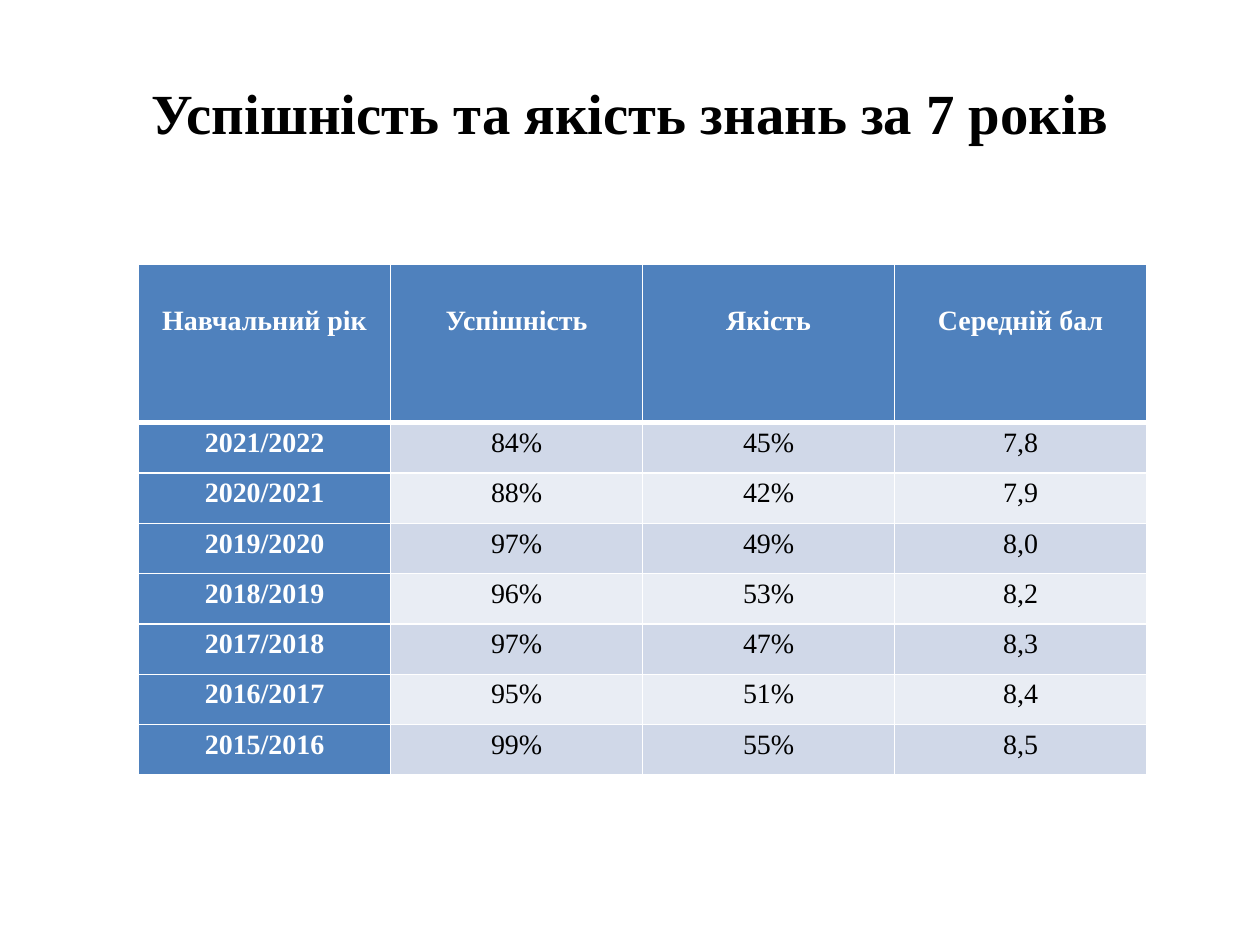
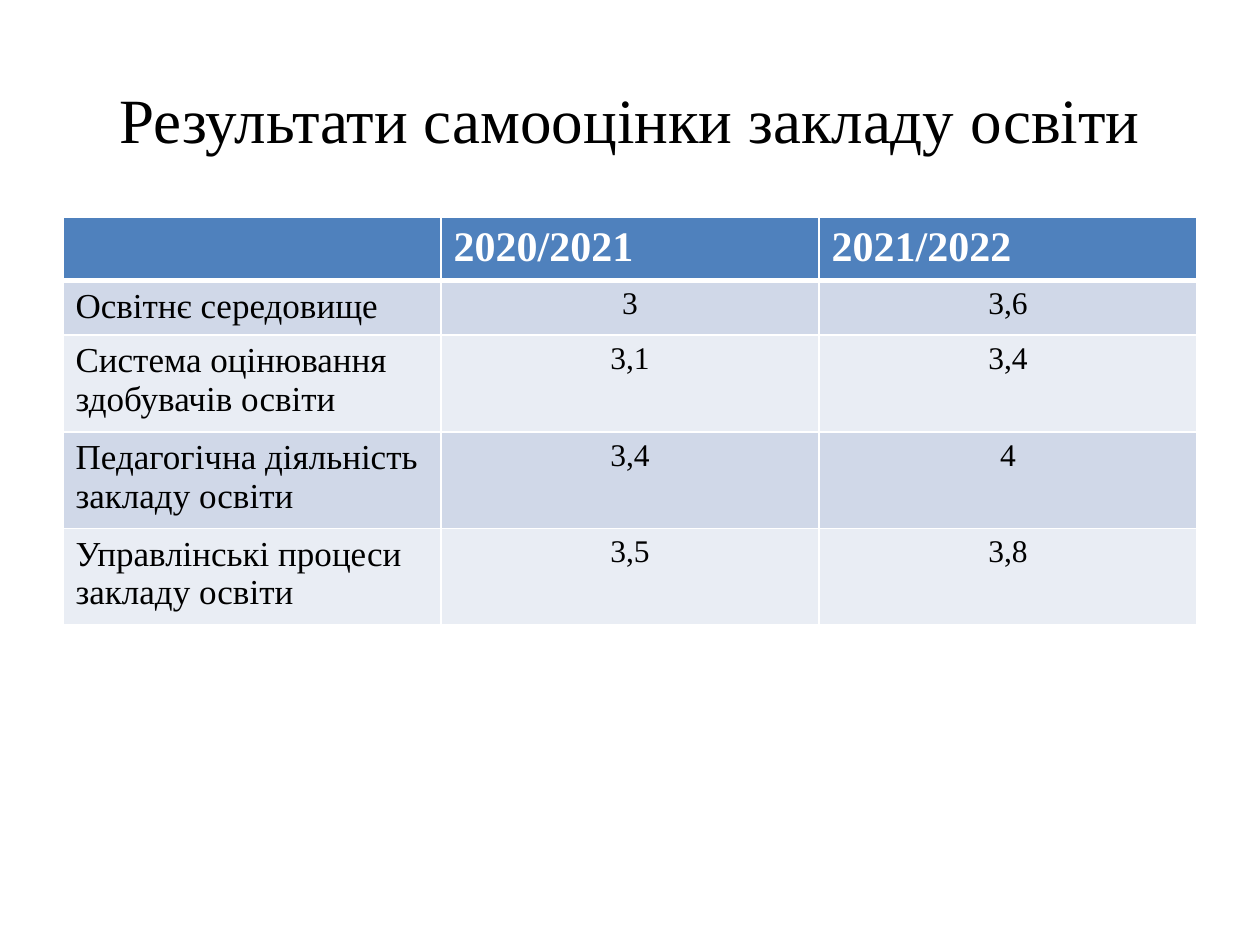
from lxml import etree
from pptx import Presentation
from pptx import util as u
from pptx.dml.color import RGBColor
from pptx.enum import text
from pptx.oxml.ns import qn

FONT = "Times New Roman"
BLACK = RGBColor(0x00, 0x00, 0x00)
WHITE = RGBColor(0xFF, 0xFF, 0xFF)
HEADER_BLUE = RGBColor(0x4F, 0x81, 0xBD)
BANDS = (RGBColor(0xD0, 0xD8, 0xE8), RGBColor(0xE9, 0xED, 0xF4))
LEFT, CENTER = text.PP_ALIGN.LEFT, text.PP_ALIGN.CENTER

SLIDE_WIDTH, SLIDE_HEIGHT = u.Inches(10), u.Inches(7.5)
TITLE_BOX = (0.05, 0.04, 0.9, 0.17)  # shares of the slide

YEARLY_HEADERS = ("Навчальний рік", "Успішність", "Якість", "Середній бал")
YEARLY_RESULTS = (
    ("2021/2022", "84%", "45%", "7,8"),
    ("2020/2021", "88%", "42%", "7,9"),
    ("2019/2020", "97%", "49%", "8,0"),
    ("2018/2019", "96%", "53%", "8,2"),
    ("2017/2018", "97%", "47%", "8,3"),
    ("2016/2017", "95%", "51%", "8,4"),
    ("2015/2016", "99%", "55%", "8,5"),
)
ASSESSMENT_HEADERS = ("", "2020/2021", "2021/2022")
ASSESSMENT_SCORES = (
    ("Освітнє середовище", "3", "3,6"),
    ("Система оцінювання здобувачів освіти", "3,1", "3,4"),
    ("Педагогічна діяльність закладу освіти", "3,4", "4"),
    ("Управлінські процеси закладу освіти", "3,5", "3,8"),
)


def on_slide(box):
    """Turn shares of the slide into lengths."""
    left, top, width, height = box
    return (int(left * SLIDE_WIDTH), int(top * SLIDE_HEIGHT),
            int(width * SLIDE_WIDTH), int(height * SLIDE_HEIGHT))


def write(frame, words, size, color=BLACK, bold=False, align=CENTER, spacing=1.0):
    paragraph = frame.paragraphs[0]
    paragraph.alignment = align
    paragraph.line_spacing = spacing
    if words:
        run = paragraph.add_run()
        run.text = words
        run.font.name, run.font.size = FONT, u.Pt(size)
        run.font.bold = bold
        run.font.color.rgb = color


def add_title(slide, box, words, size, bold=False, lift=0):
    """Centre the title in its box, raised by lift inches of bottom inset."""
    frame = slide.shapes.add_textbox(*on_slide(box)).text_frame
    frame.word_wrap = True
    frame.vertical_anchor = text.MSO_ANCHOR.MIDDLE
    frame.margin_bottom = u.Inches(0.05 + lift)
    write(frame, words, size, bold=bold)


def add_borders(cell, top, bottom):
    properties = cell._tc.get_or_add_tcPr()
    for side, points in (("L", 1), ("R", 1), ("T", top), ("B", bottom)):
        line = etree.SubElement(properties, qn(f"a:ln{side}"), w=str(u.Pt(points)))
        fill = etree.SubElement(line, qn("a:solidFill"))
        etree.SubElement(fill, qn("a:srgbClr"), val=str(WHITE))


def add_grid(slide, box, rows, header_share):
    """Add a bordered, banded table; yield its cells with position and words."""
    left, top, width, height = on_slide(box)
    table = slide.shapes.add_table(len(rows), len(rows[0]), left, top, width, height).table
    table.horz_banding = False
    header_height = int(height * header_share)
    for row in table.rows:
        row.height = (height - header_height) // (len(rows) - 1)
    table.rows[0].height = header_height
    for r, row in enumerate(rows):
        for c, words in enumerate(row):
            cell = table.cell(r, c)
            add_borders(cell, top=3 if r == 1 else 1, bottom=3 if r == 0 else 1)
            cell.fill.solid()
            cell.fill.fore_color.rgb = BANDS[(r - 1) % 2] if r else HEADER_BLUE
            yield cell, r, c, words


def add_yearly_table(slide, box):
    rows = (YEARLY_HEADERS, *YEARLY_RESULTS)
    for cell, r, c, words in add_grid(slide, box, rows, header_share=0.31):
        heading = r == 0 or c == 0
        if heading:
            cell.fill.fore_color.rgb = HEADER_BLUE
        cell.margin_left = cell.margin_right = u.Inches(0.07)
        cell.margin_top = u.Inches(0 if r else 0.29)
        cell.margin_bottom = 0
        write(cell.text_frame, words, 16, WHITE if heading else BLACK, heading, spacing=1.15)


def add_assessment_table(slide, box):
    rows = (ASSESSMENT_HEADERS, *ASSESSMENT_SCORES)
    for cell, r, c, words in add_grid(slide, box, rows, header_share=0.2):
        if r == 0:
            write(cell.text_frame, words, 24, WHITE, bold=True, align=LEFT)
        elif c == 0:
            write(cell.text_frame, words, 20, align=LEFT)
        else:
            write(cell.text_frame, words, 18)


def build_yearly_slide(slide):
    add_title(slide, TITLE_BOX, "Успішність та якість знань за 7 років", 32.4,
              bold=True, lift=0.1)
    add_yearly_table(slide, (0.11, 0.28, 0.8, 0.54))


def build_assessment_slide(slide):
    add_title(slide, TITLE_BOX, "Результати самооцінки закладу освіти", 36)
    add_assessment_table(slide, (0.05, 0.23, 0.9, 0.27))


def main():
    deck = Presentation()
    deck.slide_width, deck.slide_height = SLIDE_WIDTH, SLIDE_HEIGHT
    for build in (build_yearly_slide, build_assessment_slide):
        build(deck.slides.add_slide(deck.slide_layouts[6]))
    deck.save("out.pptx")


if __name__ == "__main__":
    main()
